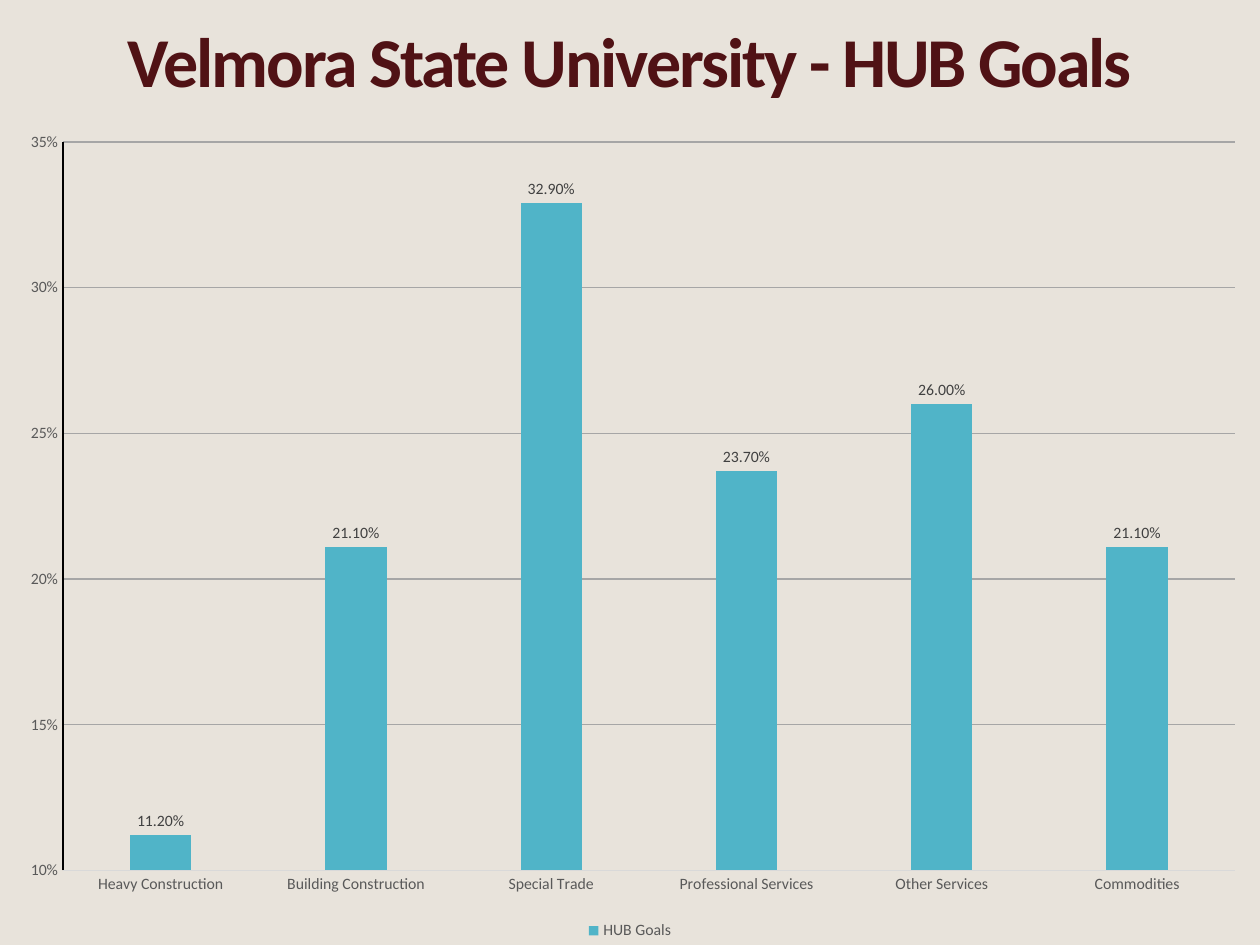
"""Build a slide with a column chart of HUB goals by spending category."""
from lxml import etree
from pptx import Presentation
from pptx.chart.data import CategoryChartData
from pptx.dml.color import RGBColor
from pptx.enum.chart import XL_CHART_TYPE as ChartType, XL_LABEL_POSITION as LabelPos
from pptx.enum.chart import XL_LEGEND_POSITION as LegendPos, XL_TICK_MARK as TickMark
from pptx.enum.text import MSO_ANCHOR as Anchor, PP_ALIGN as Align
from pptx.oxml.ns import qn
from pptx.util import Pt


def paint(target, color):
    target.solid()
    target.fore_color.rgb = RGBColor.from_string(color)


def write(frame, text, size, color, bold=False, align=Align.CENTER, spacing=0):
    frame.word_wrap = True
    frame.vertical_anchor = Anchor.MIDDLE
    paragraph = frame.paragraphs[0]
    paragraph.alignment = align
    paragraph.line_spacing = 0.9
    run = paragraph.add_run()
    run.text = text
    run.font.name, run.font.size, run.font.bold = "Calibri", Pt(size), bold
    paint(run.font.fill, color)
    run.font._element.set("spc", str(round(spacing * 100)))


prs = Presentation()
prs.slide_width, prs.slide_height = Pt(720), Pt(540)
slide = prs.slides.add_slide(prs.slide_layouts[5])
paint(slide.background.fill, "E8E3DB")

title = slide.shapes.title
title.left, title.top, title.width, title.height = Pt(0), Pt(7), Pt(720), Pt(60)
write(title.text_frame, "Velmora State University - HUB Goals", size=40,
      color="501215", bold=True, spacing=-1.2)

goals = CategoryChartData(number_format="0.00%")
goals.categories = ["Heavy Construction", "Building Construction", "Special Trade",
                    "Professional Services", "Other Services", "Commodities"]
goals.add_series("HUB Goals", [0.112, 0.211, 0.329, 0.237, 0.26, 0.211])
chart = slide.shapes.add_chart(ChartType.COLUMN_CLUSTERED, Pt(0), Pt(67),
                               Pt(720), Pt(473), goals).chart
chart.has_title = False
chart.font.name, chart.font.size = "Calibri", Pt(10)

chart.has_legend = True
chart.legend.position = LegendPos.BOTTOM
chart.legend.include_in_layout = False

plot = chart.plots[0]
plot.gap_width, plot.overlap = 219, -27
plot.vary_by_categories = False
paint(plot.series[0].format.fill, "50B4C8")
plot.has_data_labels = True
labels = plot.data_labels
labels.show_value = True
labels.position = LabelPos.OUTSIDE_END
labels.number_format, labels.number_format_is_linked = "0.00%", False

categories, percents = chart.category_axis, chart.value_axis
percents.minimum_scale, percents.maximum_scale, percents.major_unit = 0.1, 0.35, 0.05
percents.tick_labels.number_format = "0%"
percents.tick_labels.number_format_is_linked = False
percents.has_major_gridlines = True

for axis in (categories, percents):
    axis.major_tick_mark = axis.minor_tick_mark = TickMark.NONE

for line, color in ((categories.format.line, "D9D9D9"), (percents.format.line, "000000"),
                    (percents.major_gridlines.format.line, "A6A6A6")):
    line.width = Pt(0.75)
    paint(line.fill, color)

for font, color in ((categories.tick_labels.font, "595959"), (percents.tick_labels.font, "595959"),
                    (chart.legend.font, "595959"), (labels.font, "404040")):
    font.name, font.size = "Calibri", Pt(9)
    paint(font.fill, color)

plot_area = chart._chartSpace.chart.plotArea
for old_layout in plot_area.findall(qn("c:layout")):
    plot_area.remove(old_layout)
layout = etree.Element(qn("c:layout"))
plot_area.insert(0, layout)
manual = etree.SubElement(layout, qn("c:manualLayout"))
for tag, value in (("layoutTarget", "inner"), ("xMode", "edge"), ("yMode", "edge"),
                   ("x", 0.05), ("y", 0.03), ("w", 0.93), ("h", 0.88)):
    etree.SubElement(manual, qn(f"c:{tag}")).set("val", str(value))

prs.save("out.pptx")
